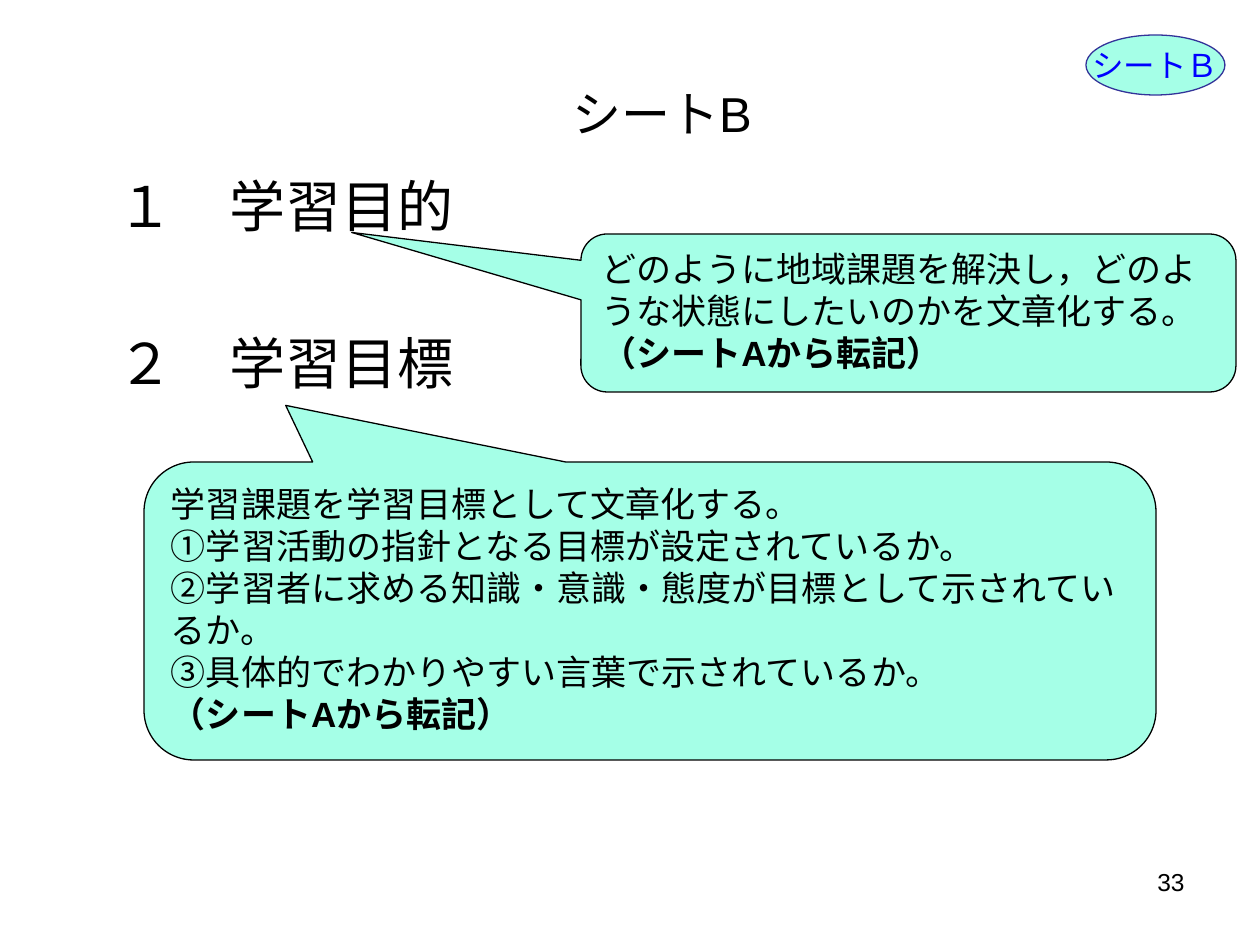
from dataclasses import dataclass
from typing import Optional

from lxml.etree import SubElement
from pptx import Presentation
from pptx.dml.color import RGBColor
from pptx.enum.shapes import MSO_SHAPE
from pptx.enum.text import MSO_ANCHOR, MSO_AUTO_SIZE, PP_ALIGN
from pptx.oxml.ns import qn
from pptx.util import Emu, Pt

SCALE = 914400 / 126
BLACK = RGBColor(0, 0, 0)
BLUE = RGBColor(0, 0, 255)
NAVY = RGBColor(0x33, 0x33, 0x99)
MINT = RGBColor(0xA5, 0xFF, 0xE7)
SOURCE = "（シートAから転記）"


@dataclass
class Box:
    left: int
    top: int
    width: int
    height: int


@dataclass
class Bubble:
    box: Box
    kind: MSO_SHAPE
    lines: list[str]
    size: int = 20
    ink: RGBColor = BLACK
    edge: RGBColor = BLACK
    align: PP_ALIGN = PP_ALIGN.LEFT
    anchor: MSO_ANCHOR = MSO_ANCHOR.TOP
    wrap: bool = True
    tail: Optional[tuple[float, float]] = None


BUBBLES = [
    Bubble(
        Box(144, 462, 1012, 298),
        MSO_SHAPE.ROUNDED_RECTANGULAR_CALLOUT,
        [
            "学習課題を学習目標として文章化する。",
            "①学習活動の指針となる目標が設定されているか。",
            "②学習者に求める知識・意識・態度が目標として示されているか。",
            "③具体的でわかりやすい言葉で示されているか。",
            SOURCE,
        ],
        tail=(-0.36, -0.69),
    ),
    Bubble(
        Box(581, 234, 655, 158),
        MSO_SHAPE.ROUNDED_RECTANGULAR_CALLOUT,
        ["どのように地域課題を解決し，どのような状態にしたいのかを文章化する。", SOURCE],
        tail=(-0.85, -0.51),
    ),
    Bubble(
        Box(1086, 35, 139, 60),
        MSO_SHAPE.OVAL,
        ["シートＢ"],
        size=18,
        ink=BLUE,
        edge=NAVY,
        align=PP_ALIGN.CENTER,
        anchor=MSO_ANCHOR.MIDDLE,
        wrap=False,
    ),
]


def px(value: int) -> Emu:
    return Emu(round(value * SCALE))


def place(shape, box: Box) -> None:
    shape.left, shape.top = px(box.left), px(box.top)
    shape.width, shape.height = px(box.width), px(box.height)


def write(frame, lines: list[str], size: int, align: PP_ALIGN,
          ink: RGBColor = BLACK) -> None:
    frame.text = "\n".join(lines)
    frame.auto_size = MSO_AUTO_SIZE.NONE
    for para in frame.paragraphs:
        para.alignment = align
        for run in para.runs:
            run.font.name = "Arial"
            run.font.size = Pt(size)
            run.font.color.rgb = ink
            if run.text == SOURCE:
                run.font.bold = True


def draw(slide, item: Bubble) -> None:
    box = item.box
    shape = slide.shapes.add_shape(
        item.kind, px(box.left), px(box.top), px(box.width), px(box.height))
    shape.shadow.inherit = False
    shape.fill.solid()
    shape.fill.fore_color.rgb = MINT
    shape.line.color.rgb = item.edge
    shape.line.width = Pt(0.75)
    if item.tail:
        shape.adjustments[0], shape.adjustments[1] = item.tail
    frame = shape.text_frame
    write(frame, item.lines, item.size, item.align, item.ink)
    frame.word_wrap = item.wrap
    frame.vertical_anchor = item.anchor


def outline(body) -> None:
    place(body, Box(105, 165, 1071, 507))
    frame = body.text_frame
    write(frame, ["１　学習目的", "２　学習目標"], 32, PP_ALIGN.LEFT)
    for para in frame.paragraphs:
        props = para._p.get_or_add_pPr()
        props.set("marL", str(px(48)))
        props.set("indent", str(px(-48)))
        SubElement(props, qn("a:buNone"))
    frame.paragraphs[1].space_before = Pt(51.5)


def main() -> None:
    deck = Presentation()
    deck.slide_width, deck.slide_height = px(1260), px(945)
    slide = deck.slides.add_slide(deck.slide_layouts[1])

    title = slide.shapes.title
    place(title, Box(95, 76, 1134, 74))
    write(title.text_frame, ["シートB"], 28, PP_ALIGN.CENTER)
    title.text_frame.vertical_anchor = MSO_ANCHOR.MIDDLE
    outline(slide.placeholders[1])

    for item in BUBBLES:
        draw(slide, item)

    page = slide.shapes.add_textbox(px(903), px(861), px(294), px(66))
    write(page.text_frame, ["33"], 14, PP_ALIGN.RIGHT)
    page.text_frame.word_wrap = True
    deck.save("out.pptx")


if __name__ == "__main__":
    main()
